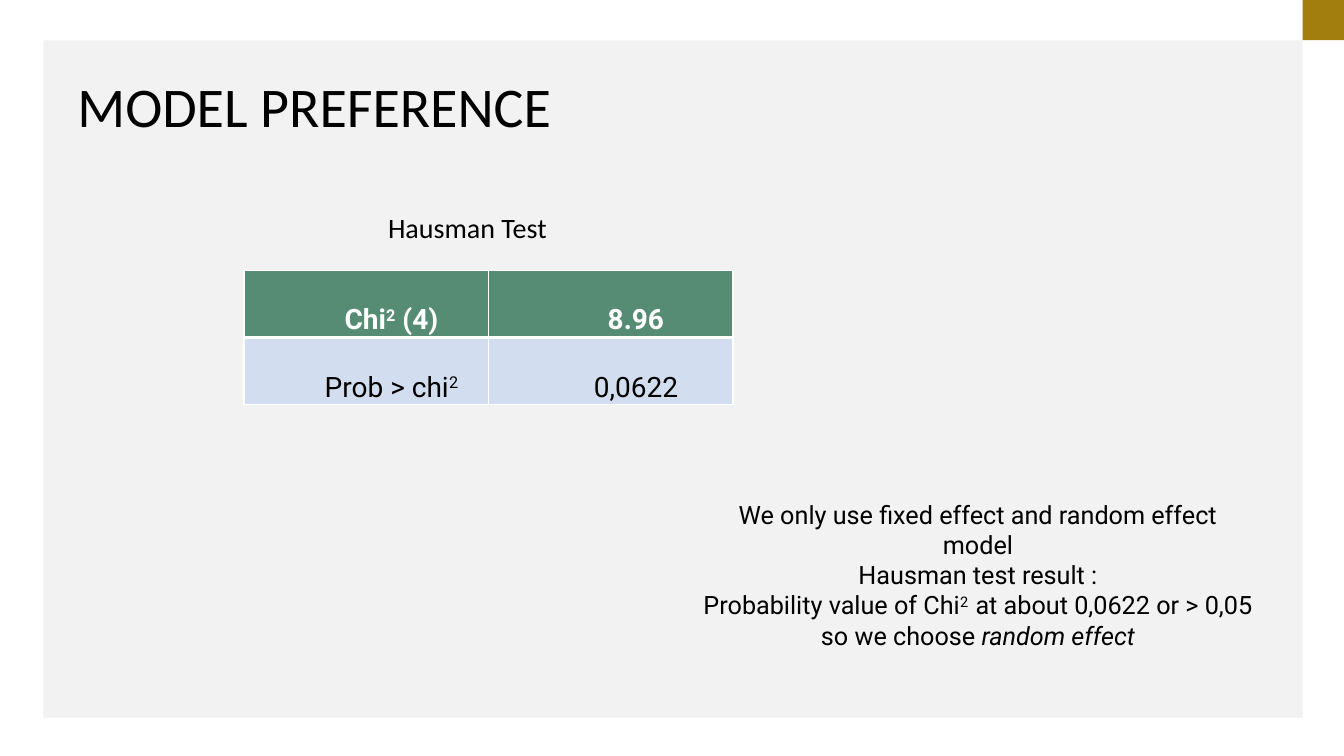
from lxml import etree
from pptx import Presentation
from pptx.dml.color import RGBColor
from pptx.enum.shapes import MSO_SHAPE
from pptx.enum.text import MSO_ANCHOR, MSO_AUTO_SIZE, PP_ALIGN
from pptx.oxml.ns import qn
from pptx.util import Inches, Pt

BLACK = RGBColor(0x00, 0x00, 0x00)
WHITE = RGBColor(0xFF, 0xFF, 0xFF)
GOLD = RGBColor(0xA2, 0x7E, 0x0E)
PANEL_GRAY = RGBColor(0xF2, 0xF2, 0xF2)
HEADER_GREEN = RGBColor(0x56, 0x8C, 0x74)
ROW_BLUE = RGBColor(0xD2, 0xDE, 0xEF)

HAUSMAN_ROWS = [
    [[("Chi", ""), ("2", "super"), (" (4)", "")], [("8.96", "")]],
    [[("Prob > chi", ""), ("2", "super")], [("0,0622", "")]],
]
NOTE = [
    [("We only use fixed effect and random effect model", "")],
    [("Hausman test result :", "")],
    [("Probability value of Chi", ""), ("2  ", "super"),
     ("at about 0,0622 or > 0,05 so we choose ", ""), ("random effect", "italic")],
]


def add_rect(slide, x, y, w, h, color):
    sp = slide.shapes.add_shape(MSO_SHAPE.RECTANGLE, Inches(x), Inches(y), Inches(w), Inches(h))
    sp.shadow.inherit = False
    sp.fill.solid()
    sp.fill.fore_color.rgb = color
    sp.line.fill.background()


def add_runs(p, runs, size, font, color=BLACK, bold=False):
    """Add (text, style) pairs, where style is "", "super" or "italic"."""
    for text, style in runs:
        r = p.add_run()
        r.text = text
        r.font.size = Pt(size)
        r.font.name = font
        r.font.color.rgb = color
        r.font.bold = bold
        if style == "italic":
            r.font.italic = True
        elif style == "super":
            r._r.get_or_add_rPr().set("baseline", "30000")


def add_text(slide, x, y, w, h, paragraphs, size, font, align=PP_ALIGN.LEFT):
    box = slide.shapes.add_textbox(Inches(x), Inches(y), Inches(w), Inches(h))
    tf = box.text_frame
    tf.word_wrap = True
    tf.auto_size = MSO_AUTO_SIZE.SHAPE_TO_FIT_TEXT
    for i, runs in enumerate(paragraphs):
        p = tf.paragraphs[0] if i == 0 else tf.add_paragraph()
        p.alignment = align
        add_runs(p, runs, size, font)


def set_borders(cell, widths):
    """Draw white borders; widths are points for left, right, top, bottom."""
    tcPr = cell._tc.get_or_add_tcPr()
    for i, (side, width) in enumerate(zip("LRTB", widths)):
        ln = etree.Element(qn(f"a:ln{side}"), w=str(Pt(width)))
        fill = etree.SubElement(ln, qn("a:solidFill"))
        etree.SubElement(fill, qn("a:srgbClr"), val=str(WHITE))
        tcPr.insert(i, ln)


def fill_cell(cell, runs, is_header):
    cell.fill.solid()
    cell.fill.fore_color.rgb = HEADER_GREEN if is_header else ROW_BLUE
    set_borders(cell, (1, 1, 1, 3) if is_header else (1, 1, 3, 1))
    cell.vertical_anchor = MSO_ANCHOR.MIDDLE
    cell.margin_left = cell.margin_right = Inches(0.07)
    cell.margin_top = cell.margin_bottom = 0
    p = cell.text_frame.paragraphs[0]
    p.alignment = PP_ALIGN.CENTER
    p.line_spacing = 2.0
    pPr = p._p.get_or_add_pPr()
    pPr.set("marL", str(Inches(0.5)))
    pPr.set("indent", "0")
    add_runs(p, runs, 20, "Roboto", WHITE if is_header else BLACK, is_header)


def add_hausman_table(slide, x, y, w, h):
    table = slide.shapes.add_table(len(HAUSMAN_ROWS), len(HAUSMAN_ROWS[0]),
                                   Inches(x), Inches(y), Inches(w), Inches(h)).table
    for i, row in enumerate(HAUSMAN_ROWS):
        for j, runs in enumerate(row):
            fill_cell(table.cell(i, j), runs, i == 0)


def main():
    prs = Presentation()
    prs.slide_width, prs.slide_height = Inches(13.33), Inches(7.5)
    s = prs.slides.add_slide(prs.slide_layouts[6])
    add_rect(s, 12.92, 0, 0.41, 0.4, GOLD)
    add_rect(s, 0.43, 0.4, 12.49, 6.72, PANEL_GRAY)
    add_text(s, 0.67, 0.66, 6.02, 0.77, [[("MODEL PREFERENCE", "")]], 40, "Calibri")
    add_text(s, 3.75, 2.04, 2.19, 0.44, [[("Hausman Test", "")]], 20, "Calibri")
    add_text(s, 6.87, 4.9, 5.66, 1.31, NOTE, 18, "Roboto", PP_ALIGN.CENTER)
    add_hausman_table(s, 2.42, 2.68, 4.85, 1.33)
    prs.save("out.pptx")


if __name__ == "__main__":
    main()
